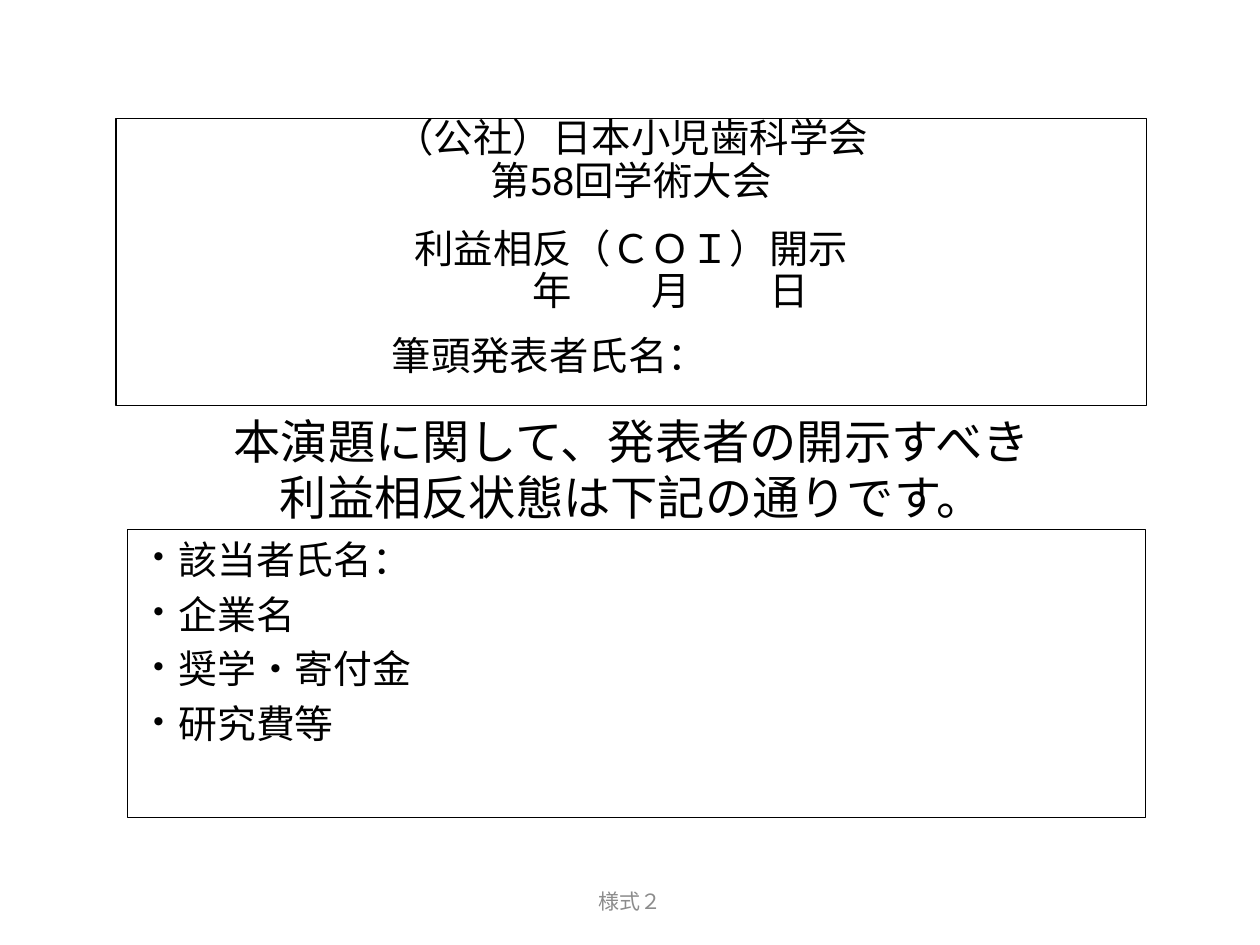
from lxml import etree
from pptx import Presentation
from pptx.dml.color import RGBColor
from pptx.enum.shapes import MSO_SHAPE
from pptx.enum.text import MSO_ANCHOR, PP_ALIGN
from pptx.oxml.ns import qn
from pptx.util import Inches, Pt

LEFT, CENTER = PP_ALIGN.LEFT, PP_ALIGN.CENTER
TOP, MIDDLE = MSO_ANCHOR.TOP, MSO_ANCHOR.MIDDLE
RECTANGLE = MSO_SHAPE.RECTANGLE

COLORS = {"ink": "000000", "muted": "8C8C8C"}
FONT, DIGIT_FONT = "Calibri", "Arial"

# Content: each line is a list of (text, font) runs
SOCIETY = [("（公社）日本小児歯科学会", FONT)]
MEETING = [("第", FONT), ("58", DIGIT_FONT), ("回学術大会", FONT)]
SUBJECT = [("利益相反（ＣＯＩ）開示", FONT)]
DATE = [("\t年\t月\t日", FONT)]
PRESENTER = [("筆頭発表者氏名：", FONT)]
STATEMENT = ["本演題に関して、発表者の開示すべき", "利益相反状態は下記の通りです。"]
DISCLOSURES = ["該当者氏名：", "企業名", "奨学・寄付金", "研究費等"]
FORM_LABEL = [("様式２", FONT)]

DATE_TABS = [3.21, 4.15, 5.09]
BULLET_INDENT = 0.11

prs = Presentation()
prs.slide_width, prs.slide_height = Inches(10), Inches(7.5)
slide = prs.slides.add_slide(prs.slide_layouts[6])


def set_frame(shape, anchor=TOP, top=0.05):
    frame = shape.text_frame
    frame.word_wrap = True
    frame.vertical_anchor = anchor
    frame.margin_left = frame.margin_right = Inches(0.1)
    frame.margin_top, frame.margin_bottom = Inches(top), Inches(0.05)
    return frame


def add_panel(box, top):
    panel = slide.shapes.add_shape(RECTANGLE, *map(Inches, box))
    panel.shadow.inherit = False
    panel.fill.background()
    panel.line.color.rgb = RGBColor.from_string(COLORS["ink"])
    panel.line.width = Pt(0.75)
    return set_frame(panel, top=top)


def add_label(box, anchor=TOP):
    return set_frame(slide.shapes.add_textbox(*map(Inches, box)), anchor)


def add_line(frame, runs, size, align=LEFT, color="ink", spacing=1.0,
             before=0, tabs=(), bullet=None):
    first = frame.paragraphs[0]
    line = first if not first.runs else frame.add_paragraph()
    line.alignment, line.line_spacing = align, spacing
    line.space_before = Pt(0 if line is first else before)
    props = line._p.get_or_add_pPr()
    if bullet:
        props.set("marL", str(Inches(BULLET_INDENT)))
        props.set("indent", str(-Inches(BULLET_INDENT)))
        etree.SubElement(props, qn("a:buFont"), typeface=FONT)
        etree.SubElement(props, qn("a:buChar"), char=bullet)
    if tabs:
        tab_list = etree.SubElement(props, qn("a:tabLst"))
        for position in tabs:
            etree.SubElement(tab_list, qn("a:tab"),
                             pos=str(Inches(position)), algn="l")
    for text, font in runs:
        run = line.add_run()
        run.text = text
        run.font.name, run.font.size = font, Pt(size)
        run.font.color.rgb = RGBColor.from_string(COLORS[color])


# Title panel
title = add_panel((0.92, 0.94, 8.18, 2.28), top=0)
add_line(title, SOCIETY, 22.5, CENTER, spacing=0.9)
add_line(title, MEETING, 22.5, CENTER, spacing=0.9)
add_line(title, SUBJECT, 22.5, CENTER, spacing=0.9, before=14.5)
add_line(title, DATE, 22.5, spacing=0.9, tabs=DATE_TABS)

# Disclosure panel
disclosure = add_panel((1.01, 4.2, 8.08, 2.29), top=0.12)
for item in DISCLOSURES:
    add_line(disclosure, [(item, FONT)], 22.2, spacing=0.8, before=10, bullet="・")

# Statement between the panels
statement = add_label((1.03, 3.22, 7.97, 1.01))
for sentence in STATEMENT:
    add_line(statement, [(sentence, FONT)], 27, CENTER)

# Presenter name and form label
add_line(add_label((3.01, 2.58, 4.61, 0.48)), PRESENTER, 22.5)
add_line(add_label((3.31, 6.95, 3.38, 0.4), MIDDLE), FORM_LABEL, 12, CENTER, "muted")

prs.save("out.pptx")
